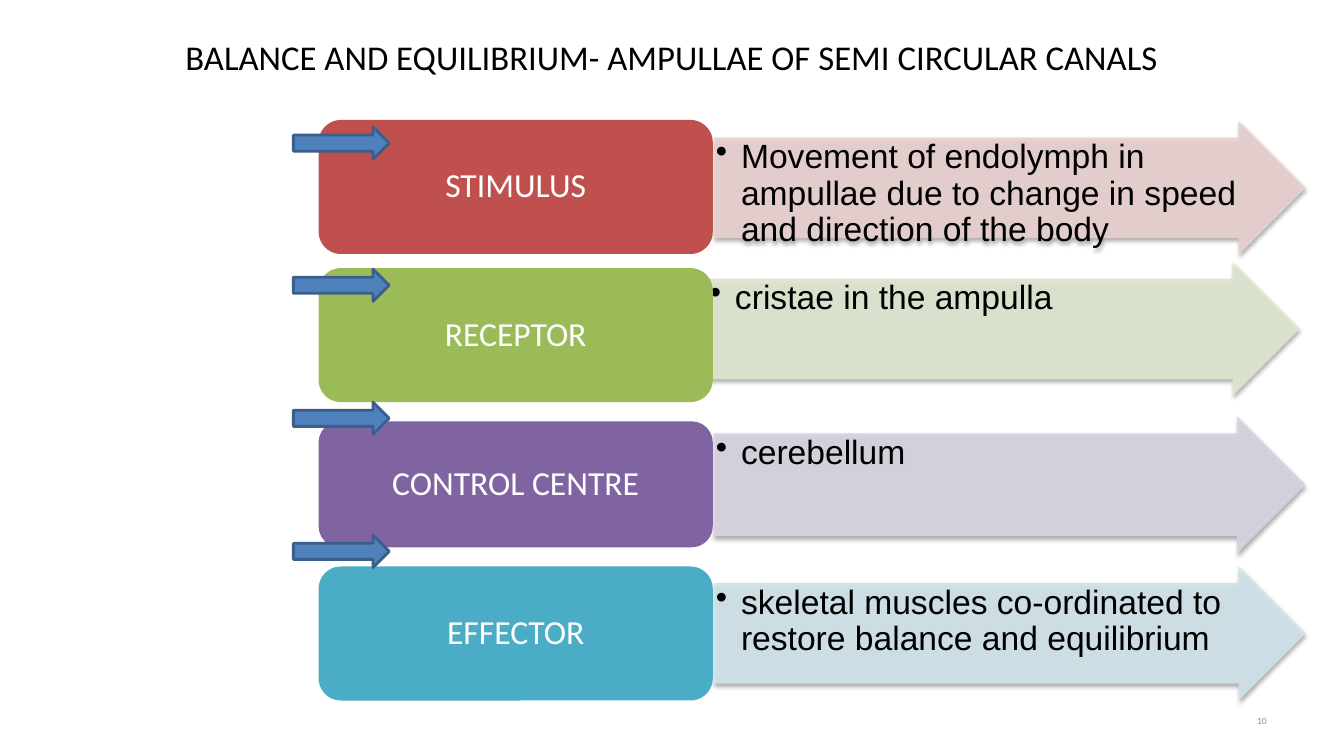
from lxml import etree
from pptx import Presentation
from pptx import util as u
from pptx.dml.color import RGBColor
from pptx.enum import shapes, text
from pptx.oxml.ns import qn

TITLE = "BALANCE AND EQUILIBRIUM- AMPULLAE OF SEMI CIRCULAR CANALS"
PAGE_NUMBER = "10"
# label, detail, box colour, arrow colour, box (top, height), arrow (left, top, height)
STAGES = [
    ("STIMULUS", "Movement of endolymph in ampullae due to change in speed and direction of the body",
     "C0504D", "E8D0D0", (1.19, 1.33), (7.08, 1.2, 1.33)),
    ("RECEPTOR", "cristae in the ampulla",
     "9BBB59", "DEE7D1", (2.66, 1.33), (7.02, 2.6, 1.33)),
    ("CONTROL CENTRE", "cerebellum",
     "8064A2", "D8D3E0", (4.18, 1.25), (7.08, 4.13, 1.36)),
    ("EFFECTOR", "skeletal muscles co-ordinated to restore balance and equilibrium",
     "4BACC6", "D0E3EA", (5.62, 1.33), (7.08, 5.62, 1.33)),
]
POINTER_TOPS = [1.26, 2.67, 3.99, 5.31]

SLIDE_WIDTH, SLIDE_HEIGHT = 13.33, 7.5
BOX_LEFT, BOX_WIDTH = 3.16, 3.91
ARROW_WIDTH = 5.87
POINTER_LEFT, POINTER_WIDTH, POINTER_HEIGHT = 2.91, 0.95, 0.32
MARGIN = SLIDE_WIDTH * 0.05


def colour(hex_string):
    return RGBColor.from_string(hex_string)


def write(shape, words, size, font_name, hex_string, align, anchor):
    frame = shape.text_frame
    frame.word_wrap = True
    frame.auto_size = text.MSO_AUTO_SIZE.NONE
    frame.vertical_anchor = anchor
    frame.text = words
    paragraph = frame.paragraphs[0]
    paragraph.alignment = align
    paragraph.font.size = u.Pt(size)
    paragraph.font.name = font_name
    paragraph.font.color.rgb = colour(hex_string)
    return paragraph


def add_block(slide, kind, left, top, width, height, fill):
    shape = slide.shapes.add_shape(kind, *map(u.Inches, (left, top, width, height)))
    shape.shadow.inherit = False
    shape.fill.solid()
    shape.fill.fore_color.rgb = colour(fill)
    shape.line.fill.background()
    return shape


def soften(shape):
    """Make the fill 90% opaque and cast a soft shadow downwards."""
    properties = shape._element.spPr
    fill = properties.find(qn("a:solidFill")).find(qn("a:srgbClr"))
    etree.SubElement(fill, qn("a:alpha"), val="90000")
    shadow = etree.SubElement(properties.find(qn("a:effectLst")), qn("a:outerShdw"),
                              blurRad=str(u.Pt(3.1)), dist=str(u.Pt(1.8)),
                              dir="5400000", rotWithShape="0")
    black = etree.SubElement(shadow, qn("a:srgbClr"), val="000000")
    etree.SubElement(black, qn("a:alpha"), val="35000")


def add_bullet(paragraph):
    properties = paragraph._p.get_or_add_pPr()
    properties.set("marL", str(u.Inches(0.25)))
    properties.set("indent", str(u.Inches(-0.25)))
    bullet = etree.Element(qn("a:buChar"), char="•")
    defaults = properties.find(qn("a:defRPr"))
    defaults.addprevious(bullet)


def add_stage(slide, label, detail, box_fill, arrow_fill, box_rows, arrow_place):
    # Arrow with the detail
    left, top, height = arrow_place
    arrow = add_block(slide, shapes.MSO_SHAPE.RIGHT_ARROW, left, top, ARROW_WIDTH, height, arrow_fill)
    arrow.adjustments[0], arrow.adjustments[1] = 0.75, 0.5
    soften(arrow)
    frame = arrow.text_frame
    frame.margin_left = frame.margin_right = frame.margin_top = frame.margin_bottom = u.Inches(0.02)
    paragraph = write(arrow, detail, 24, "Arial", "000000",
                      text.PP_ALIGN.LEFT, text.MSO_ANCHOR.TOP)
    add_bullet(paragraph)
    paragraph.line_spacing = 0.9

    # Rounded box with the label
    top, height = box_rows
    box = add_block(slide, shapes.MSO_SHAPE.ROUNDED_RECTANGLE, BOX_LEFT, top, BOX_WIDTH, height, box_fill)
    paragraph = write(box, label, 24, "Calibri", "FFFFFF",
                      text.PP_ALIGN.CENTER, text.MSO_ANCHOR.MIDDLE)
    paragraph.line_spacing = 0.9


def main():
    presentation = Presentation()
    presentation.slide_width = u.Inches(SLIDE_WIDTH)
    presentation.slide_height = u.Inches(SLIDE_HEIGHT)
    slide = presentation.slides.add_slide(presentation.slide_layouts[5])

    # Title
    title = slide.shapes.title
    title.left, title.top = u.Inches(MARGIN), u.Inches(0.3)
    title.width, title.height = u.Inches(SLIDE_WIDTH - 2 * MARGIN), u.Inches(0.53)
    write(title, TITLE, 24.8, "Calibri", "000000", text.PP_ALIGN.CENTER, text.MSO_ANCHOR.MIDDLE)

    # Page number
    number_width = 3.11
    number = slide.shapes.add_textbox(u.Inches(SLIDE_WIDTH - MARGIN - number_width), u.Inches(6.95),
                                      u.Inches(number_width), u.Inches(0.4))
    write(number, PAGE_NUMBER, 6.8, "Calibri", "8C8C8C", text.PP_ALIGN.RIGHT, text.MSO_ANCHOR.MIDDLE)

    # Stages of the reflex
    for stage in STAGES:
        add_stage(slide, *stage)

    # Small pointers on the left
    for top in POINTER_TOPS:
        pointer = add_block(slide, shapes.MSO_SHAPE.RIGHT_ARROW, POINTER_LEFT, top,
                            POINTER_WIDTH, POINTER_HEIGHT, "4F81BD")
        pointer.line.color.rgb = colour("3A5F8C")
        pointer.line.width = u.Pt(2)

    presentation.save("out.pptx")


if __name__ == "__main__":
    main()
